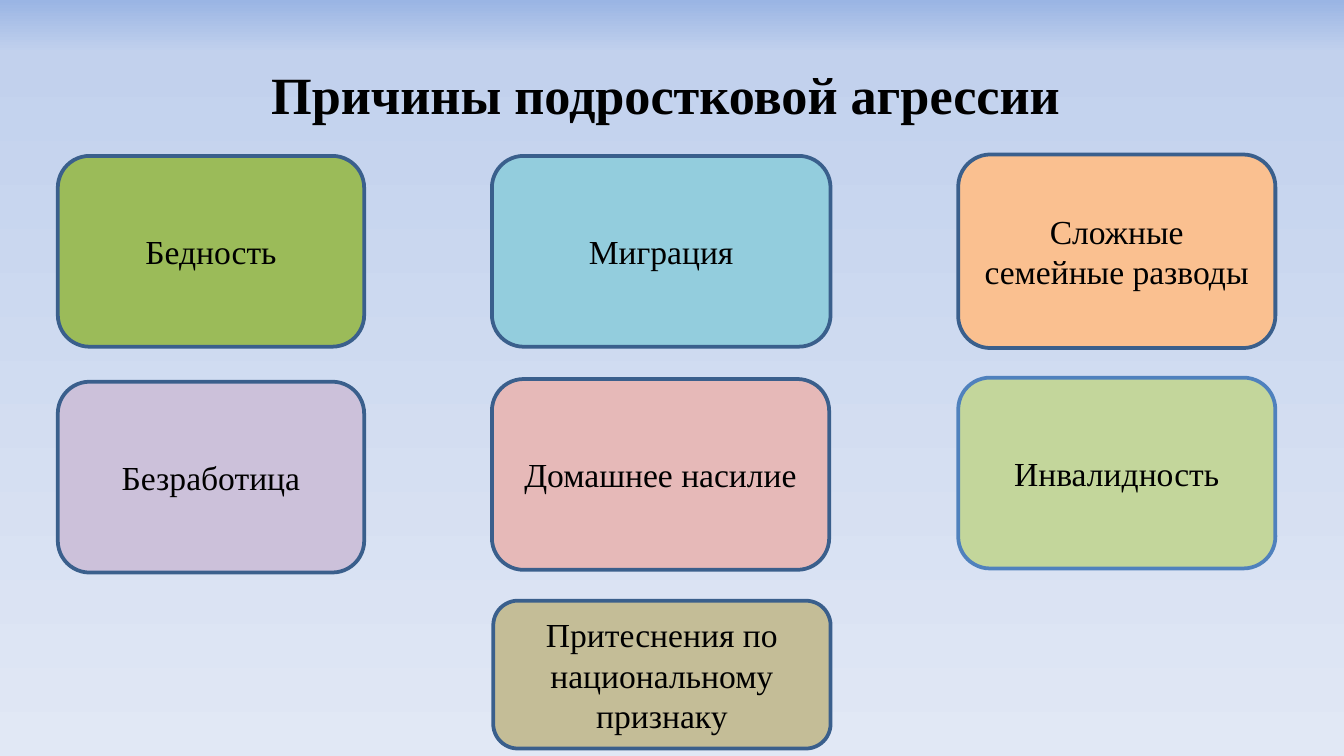
import copy

import pptx
import pptx.util
import pptx.dml.color
import pptx.enum.shapes
import pptx.enum.text

Inches = pptx.util.Inches
Pt = pptx.util.Pt

# Content
TITLE = "Причины подростковой агрессии "
FONT = "Times New Roman"
COLORS = {
    "text": "000000", "outline": "3A5F8C", "light outline": "4F81BD",
    "green": "9BBB59", "aqua": "93CDDD", "orange": "FAC090",
    "purple": "CCC1DA", "rose": "E6B9B8", "lime": "C3D69B", "tan": "C4BD97",
    "sky top": "9AB5E4", "sky middle": "C2D1ED", "sky bottom": "E1E8F5",
}
BACKGROUND = [(0, "sky top"), (0.07, "sky middle"), (1, "sky bottom")]
# text, fill, outline, (left, top, width, height)
CAUSES = [
    ("Бедность", "green", "outline", (0.43, 1.16, 2.28, 1.42)),
    ("Миграция", "aqua", "outline", (3.66, 1.16, 2.52, 1.42)),
    ("Сложные семейные разводы", "orange", "outline", (7.13, 1.15, 2.36, 1.44)),
    ("Безработица", "purple", "outline", (0.43, 2.84, 2.28, 1.42)),
    ("Домашнее насилие", "rose", "outline", (3.66, 2.82, 2.51, 1.42)),
    ("Инвалидность", "lime", "light outline", (7.13, 2.81, 2.36, 1.42)),
    ("Притеснения по национальному признаку", "tan", "outline",
     (3.67, 4.47, 2.51, 1.1)),
]


def color(name):
    return pptx.dml.color.RGBColor.from_string(COLORS[name])


def write(box, text, size, bold=False):
    frame = box.text_frame
    frame.word_wrap = True
    frame.vertical_anchor = pptx.enum.text.MSO_ANCHOR.MIDDLE
    para = frame.paragraphs[0]
    para.text = text
    para.alignment = pptx.enum.text.PP_ALIGN.CENTER
    para.font.name = FONT
    para.font.size = Pt(size)
    para.font.bold = bold
    para.font.color.rgb = color("text")


# Slide in 16:9
deck = pptx.Presentation()
deck.slide_width = Inches(10)
deck.slide_height = Inches(10 * 9 / 16)
page = deck.slides.add_slide(deck.slide_layouts[6])

# Background: gradient from top to bottom, with a third stop added
fill = page.background.fill
fill.gradient()
fill.gradient_angle = 270
stop_list = fill._fill._gradFill.gsLst
stop_list.append(copy.deepcopy(stop_list[-1]))
for stop, (position, name) in zip(fill.gradient_stops, BACKGROUND):
    stop.position = position
    stop.color.rgb = color(name)

# Title
title = page.shapes.add_textbox(Inches(0.5), Inches(0.23), Inches(9), Inches(0.94))
write(title, TITLE, 28, bold=True)

# Causes
for text, fill_name, line_name, place in CAUSES:
    box = page.shapes.add_shape(
        pptx.enum.shapes.MSO_SHAPE.ROUNDED_RECTANGLE, *map(Inches, place))
    box.shadow.inherit = False
    box.fill.solid()
    box.fill.fore_color.rgb = color(fill_name)
    box.line.color.rgb = color(line_name)
    box.line.width = Pt(2)
    write(box, text, 18)

deck.save("out.pptx")
